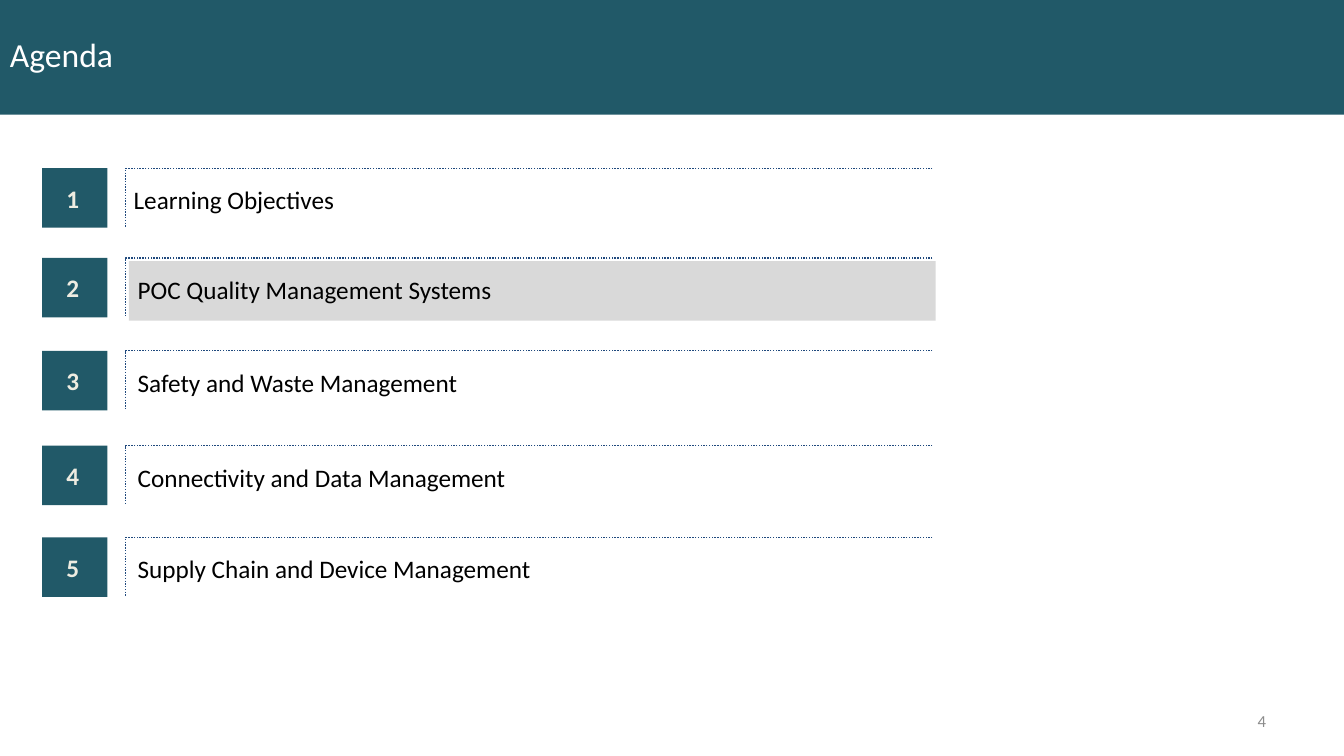
from pptx import Presentation
from pptx.dml.color import RGBColor
from pptx.enum.dml import MSO_LINE_DASH_STYLE as Dash
from pptx.enum.shapes import MSO_SHAPE as Shape
from pptx.enum.text import MSO_ANCHOR as Anchor, PP_ALIGN as Align
from pptx.util import Cm, Pt

TEAL, GREY, NAVY, CREAM = "215968", "D9D9D9", "1F497D", "EEECE1"
TOPICS = [
    # top (cm), topic, highlighted
    (4.24, "Learning Objectives", False),
    (6.5, "POC Quality Management Systems", True),
    (8.84, "Safety and Waste Management", False),
    (11.23, "Connectivity and Data Management", False),
    (13.54, "Supply Chain and Device Management", False),
]


def color(hex_string):
    return RGBColor.from_string(hex_string)


def write(shape, text, size=18, ink="000000", bold=False, align=Align.LEFT,
          anchor=Anchor.TOP, insets=(0, 0, 0, 0), spacing=1.0):
    """Put one formatted paragraph in a shape; insets are in cm."""
    frame = shape.text_frame
    frame.word_wrap = True
    frame.vertical_anchor = anchor
    (frame.margin_left, frame.margin_top,
     frame.margin_right, frame.margin_bottom) = map(Cm, insets)
    paragraph = frame.paragraphs[0]
    paragraph.alignment = align
    paragraph.line_spacing = spacing
    run = paragraph.add_run()
    run.text = text
    run.font.name = "Calibri"
    run.font.size = Pt(size)
    run.font.bold = bold
    run.font.color.rgb = color(ink)


def add_block(shapes, left, top, width, height, fill):
    block = shapes.add_shape(Shape.RECTANGLE, Cm(left), Cm(top), Cm(width), Cm(height))
    block.shadow.inherit = False
    block.fill.solid()
    block.fill.fore_color.rgb = color(fill)
    block.line.fill.background()
    return block


def add_header(slide, left, top, width, height):
    banner = add_block(slide.shapes, left, top, width, height, TEAL)
    title = slide.shapes.title
    title.left, title.top = Cm(left), Cm(top + 0.08)
    title.width, title.height = Cm(width - 0.1), Cm(height - 0.23)
    write(title, "Agenda", size=24, ink="FFFFFF", anchor=Anchor.MIDDLE,
          insets=(0.25, 0.13, 0.25, 0.13))
    # The banner lies behind the title
    title._element.addprevious(banner._element)


def add_topic(slide, number, topic, highlighted, left, top, width, height):
    shapes = slide.shapes.add_group_shape().shapes

    # Number tile
    tile = add_block(shapes, left, top, 1.65, height, TEAL)
    write(tile, str(number), ink=CREAM, bold=True, align=Align.CENTER,
          anchor=Anchor.MIDDLE, insets=(0.15, 0.13, 0.25, 0.13))

    # Highlight of the current topic
    bar_left, right = left + 2.11, left + width
    if highlighted:
        add_block(shapes, bar_left + 0.08, top + 0.08, right - bar_left, height, GREY)

    # Dotted corner line
    builder = shapes.build_freeform(Cm(right), Cm(top))
    builder.add_line_segments(
        [(Cm(bar_left), Cm(top)), (Cm(bar_left), Cm(top + height))], close=False)
    corner = builder.convert_to_shape()
    corner.shadow.inherit = False
    corner.fill.background()
    corner.line.color.rgb = color(NAVY)
    corner.line.width = Pt(1)
    corner.line.dash_style = Dash.ROUND_DOT

    # Topic text, the first one a little further left
    indent, drop, spacing = (0.2, 0.41, 1.0) if number == 1 else (0.3, 0.47, 0.95)
    label = shapes.add_textbox(Cm(bar_left + indent), Cm(top + drop), Cm(18.9), Cm(0.74))
    write(label, topic, spacing=spacing)


def add_page_number(slide, left, top, width, height):
    box = slide.shapes.add_textbox(Cm(left), Cm(top), Cm(width), Cm(height))
    write(box, "4", size=12, ink="8C8C8C", align=Align.RIGHT, anchor=Anchor.MIDDLE,
          insets=(0.25, 0.13, 0.25, 0.13))


def main():
    presentation = Presentation()
    presentation.slide_width, presentation.slide_height = Cm(33.87), Cm(19.05)
    slide = presentation.slides.add_slide(presentation.slide_layouts[5])
    add_header(slide, 0, -0.08, 33.87, 2.97)
    for number, (top, topic, highlighted) in enumerate(TOPICS, start=1):
        add_topic(slide, number, topic, highlighted, 1.06, top, 22.44, 1.5)
    add_page_number(slide, 24.26, 17.65, 7.9, 1.02)
    presentation.save("out.pptx")


if __name__ == "__main__":
    main()
